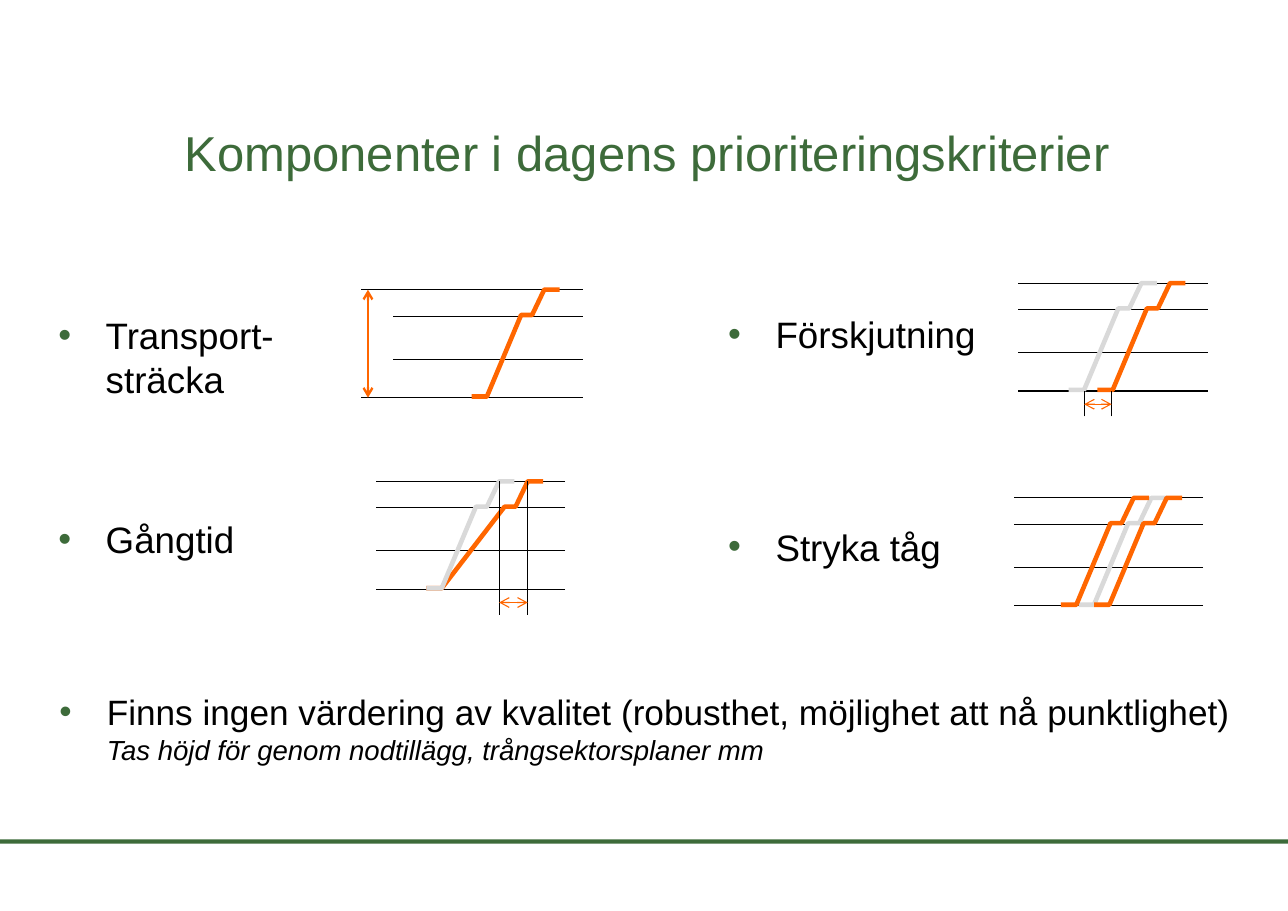
from lxml import etree
from pptx import Presentation
from pptx.dml.color import RGBColor
from pptx.enum import shapes, text
from pptx.oxml import ns
from pptx.util import Inches, Pt

GREEN = RGBColor(0x3D, 0x6B, 0x3A)
ORANGE = RGBColor(0xFF, 0x66, 0x00)
GREY = RGBColor(0xD9, 0xD9, 0xD9)
BLACK = RGBColor(0, 0, 0)
WHITE = RGBColor(0xFF, 0xFF, 0xFF)

FONT = "Arial"
WIDTH, HEIGHT = 11.69, 8.27
STATIONS = (0, 0.24, 0.63, 0.98)
TRACK_W = 1.72
TICK_END = 1.21
GAP_Y = 1.1
INDENT = 0.43


def add_line(parent, x1, y1, x2, y2, color=BLACK, width=0.75, arrows=False):
    line = parent.shapes.add_connector(
        shapes.MSO_CONNECTOR.STRAIGHT, Inches(x1), Inches(y1), Inches(x2), Inches(y2))
    line.line.color.rgb = color
    line.line.width = Pt(width)
    if arrows:
        ln = line.line._get_or_add_ln()
        for end in ("a:headEnd", "a:tailEnd"):
            etree.SubElement(ln, ns.qn(end), type="arrow")
    etree.SubElement(line._element.spPr, ns.qn("a:effectLst"))


def add_train(parent, x, y, color, delay=0):
    """Draw a train's run from the bottom station to the top; delay widens its first leg."""
    points = [(0, 0.97), (0.14, 0.97), (0.45 + delay, 0.23),
              (0.55 + delay, 0.23), (0.66 + delay, 0), (0.8 + delay, 0)]
    points = [(Inches(x + dx), Inches(y + dy)) for dx, dy in points]
    builder = parent.shapes.build_freeform(*points[0])
    builder.add_line_segments(points[1:], close=False)
    sp = builder.convert_to_shape()
    sp.fill.background()
    sp.line.color.rgb = color
    sp.line.width = Pt(3)
    sp.shadow.inherit = False


def add_diagram(slide, x, y, trains, gap=None, gap_top=0, span=False):
    """Draw stations and trains, with a time gap or the whole span marked by an arrow."""
    group = slide.shapes.add_group_shape()
    for station in STATIONS:
        outer = station in (STATIONS[0], STATIONS[-1])
        left = x - 0.29 if span and outer else x
        add_line(group, x + TRACK_W, y + station, left, y + station)
    for dx, color, delay in trains:
        add_train(group, x + dx, y, color, delay)
    if gap:
        for dx in gap:
            add_line(group, x + dx, y + TICK_END, x + dx, y + gap_top)
        add_line(group, x + gap[0], y + GAP_Y, x + gap[1], y + GAP_Y, ORANGE, arrows=True)
    if span:
        add_line(group, x - 0.23, y + STATIONS[-1], x - 0.23, y, ORANGE, 1.5, True)


def add_text(slide, x, y, w, h, content, size, color=BLACK):
    tf = slide.shapes.add_textbox(Inches(x), Inches(y), Inches(w), Inches(h)).text_frame
    tf.word_wrap = True
    tf.margin_left = tf.margin_right = Inches(0.11)
    tf.margin_top = tf.margin_bottom = Inches(0.06)
    tf.text = content
    for r in tf.paragraphs[0].runs:
        r.font.name = FONT
        r.font.size = Pt(size)
        r.font.color.rgb = color
    return tf


def add_title(slide, x, y, w, h):
    tf = add_text(slide, x, y, w, h, "Komponenter i dagens prioriteringskriterier", 32, GREEN)
    tf.vertical_anchor = text.MSO_ANCHOR.MIDDLE
    tf.paragraphs[0].alignment = text.PP_ALIGN.CENTER


def add_bullet(slide, x, y, w, h, content, size=24):
    p = add_text(slide, x, y, w, h, content, size).paragraphs[0]
    pPr = p._p.get_or_add_pPr()
    pPr.set("marL", str(Inches(INDENT)))
    pPr.set("indent", str(-Inches(INDENT)))
    color = etree.SubElement(pPr, ns.qn("a:buClr"))
    etree.SubElement(color, ns.qn("a:srgbClr"), val=str(GREEN))
    etree.SubElement(pPr, ns.qn("a:buFont"), typeface=FONT)
    etree.SubElement(pPr, ns.qn("a:buChar"), char="•")
    return p


def add_quality_note(slide, x, y, w, h):
    p = add_bullet(
        slide, x, y, w, h,
        "Finns ingen värdering av kvalitet (robusthet, möjlighet att nå punktlighet)\v"
        "Tas höjd för genom nodtillägg, trångsektorsplaner mm", 23)
    p.runs[1].font.size = Pt(18)
    p.runs[1].font.italic = True


def add_footer_bar(slide, x, y, w, h):
    bar = slide.shapes.add_shape(
        shapes.MSO_SHAPE.RECTANGLE, Inches(x), Inches(y), Inches(w), Inches(h))
    bar.fill.solid()
    bar.fill.fore_color.rgb = GREEN
    bar.line.fill.background()
    bar.shadow.inherit = False


def main():
    prs = Presentation()
    prs.slide_width, prs.slide_height = Inches(WIDTH), Inches(HEIGHT)
    slide = prs.slides.add_slide(prs.slide_layouts[6])
    slide.background.fill.solid()
    slide.background.fill.fore_color.rgb = WHITE

    add_footer_bar(slide, 0, 7.62, WIDTH, 0.04)
    add_title(slide, 0.41, 0.69, 10.94, 1.38)

    add_bullet(slide, 0.42, 2.78, 2.7, 0.9, "Transport-\vsträcka")
    add_diagram(slide, 3.57, 2.63, [(0.71, ORANGE, 0)], span=True)

    add_bullet(slide, 0.42, 4.63, 2.7, 0.5, "Gångtid")
    add_diagram(slide, 3.41, 4.37, [(0.46, ORANGE, 0.26), (0.46, GREY, 0)],
                gap=(1.12, 1.38))

    add_bullet(slide, 6.5, 2.77, 2.7, 0.5, "Förskjutning")
    add_diagram(slide, 9.24, 2.57, [(0.72, ORANGE, 0), (0.46, GREY, 0)],
                gap=(0.6, 0.85), gap_top=STATIONS[-1])

    add_bullet(slide, 6.5, 4.7, 2.7, 0.5, "Stryka tåg")
    add_diagram(slide, 9.2, 4.52, [(0.59, GREY, 0), (0.43, ORANGE, 0), (0.73, ORANGE, 0)])

    add_quality_note(slide, 0.43, 6.21, 10.94, 1.02)
    prs.save("out.pptx")


if __name__ == "__main__":
    main()
